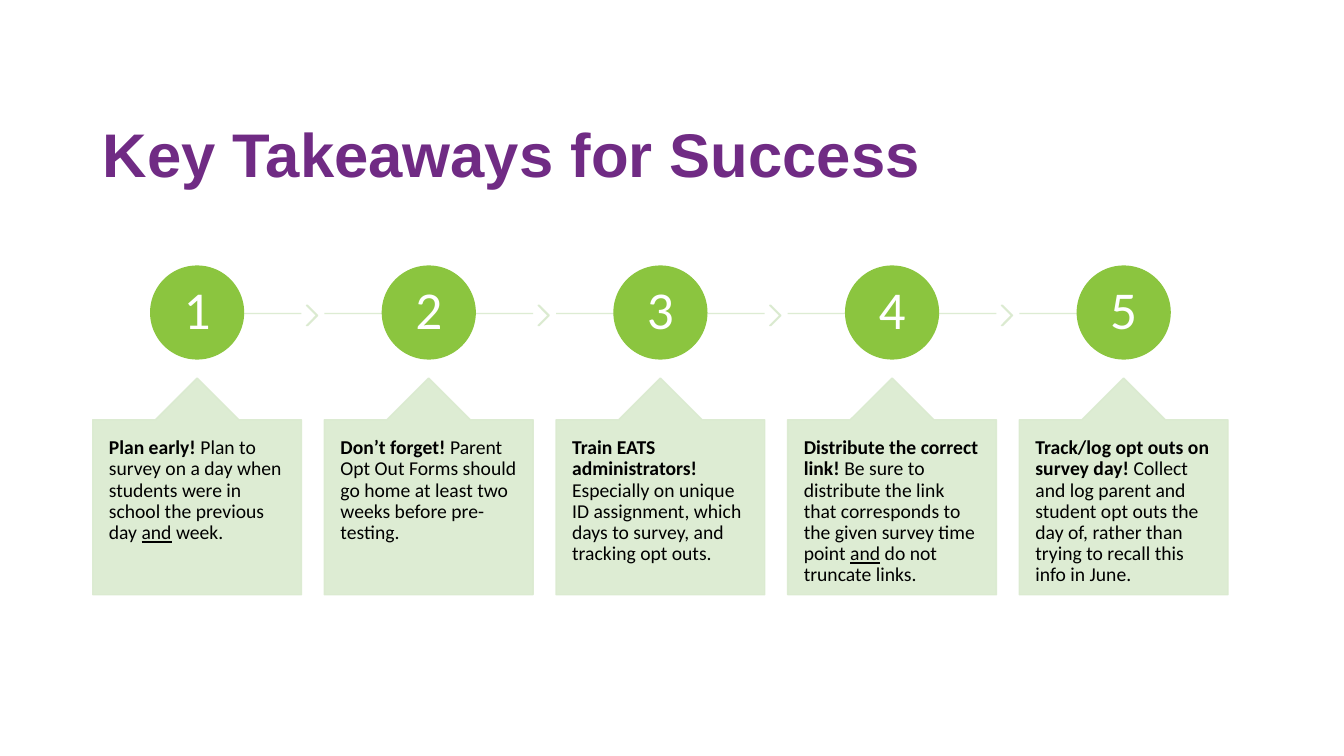
from lxml.etree import SubElement
from pptx import Presentation
from pptx.dml.color import RGBColor
from pptx.enum.shapes import MSO_CONNECTOR, MSO_SHAPE
from pptx.enum.text import MSO_ANCHOR, PP_ALIGN
from pptx.oxml.ns import qn
from pptx.util import Inches, Pt

COLORS = {"purple": "702B84", "green": "8BC53F", "pale": "DAEACF",
          "white": "FFFFFF", "black": "000000"}

# Each step is a list of (text, style) runs
STEPS = [
    [("Plan early! ", "b"),
     ("Plan to survey on a day when students were in school the previous day ", ""),
     ("and", "u"), (" week.", "")],
    [("Don’t forget!", "b"),
     (" Parent Opt Out Forms should go home at least two weeks before pre-testing.", "")],
    [("Train EATS administrators! ", "b"),
     ("Especially on unique ID assignment, which days to survey, and tracking opt outs.", "")],
    [("Distribute the correct link! ", "b"),
     ("Be sure to distribute the link that corresponds to the given survey time point ", ""),
     ("and", "u"), (" do not truncate links.", "")],
    [("Track/log opt outs on survey day! ", "b"),
     ("Collect and log parent and student opt outs the day of, rather than trying "
      "to recall this info in June.", "")],
]


class StepSlide:
    # Column grid in inches
    LEFT, RIGHT, COLUMN = 0.92, 12.18, 2.07
    PITCH = (RIGHT - LEFT - COLUMN) / (len(STEPS) - 1)
    # Rows in inches
    TITLE_TOP, CIRCLE_TOP, CALLOUT_TOP = 0.84, 2.64, 3.75
    CIRCLE, CALLOUT_HEIGHT = 0.92, 2.15
    LINE_Y = 3.11

    def __init__(self, slide):
        self.slide = slide

    def x(self, column):
        """Left edge of the point that lies `column` pitches along the grid."""
        return self.LEFT + column * self.PITCH

    def paint(self, target, color, opacity=100):
        target.solid()
        target.fore_color.rgb = RGBColor.from_string(COLORS[color])
        if opacity < 100:
            srgb = target._xPr.find(qn("a:solidFill")).find(qn("a:srgbClr"))
            SubElement(srgb, qn("a:alpha")).set("val", str(opacity * 1000))

    def add_text(self, frame, runs, font, size, color, inset, anchor, align=PP_ALIGN.LEFT):
        frame.word_wrap = True
        frame.vertical_anchor = anchor
        frame.margin_left = frame.margin_right = Inches(inset[0])
        frame.margin_top = frame.margin_bottom = Inches(inset[1])
        paragraph = frame.paragraphs[0]
        paragraph.alignment = align
        paragraph.line_spacing = 0.9
        for text, style in runs:
            run = paragraph.add_run()
            run.text = text
            run.font.name = font
            run.font.size = Pt(size)
            run.font.bold = style == "b"
            run.font.underline = style == "u"
            run.font.color.rgb = RGBColor.from_string(COLORS[color])

    def shape(self, preset, left, top, width, height, color, opacity=100, adjust=()):
        shape = self.slide.shapes.add_shape(
            preset, Inches(left), Inches(top), Inches(width), Inches(height))
        shape.shadow.inherit = False
        for index, value in enumerate(adjust):
            shape.adjustments[index] = value
        self.paint(shape.fill, color, opacity)
        self.paint(shape.line.fill, color, opacity)
        shape.line.width = Pt(1)
        return shape

    def title(self, text):
        box = self.slide.shapes.add_textbox(
            Inches(self.LEFT), Inches(self.TITLE_TOP), Inches(11.5), Inches(1.45))
        self.add_text(box.text_frame, [(text, "b")], "Arial", 44, "purple",
                      (0.1, 0.05), MSO_ANCHOR.MIDDLE)

    def track(self, start, end):
        line = self.slide.shapes.add_connector(
            MSO_CONNECTOR.STRAIGHT, Inches(start), Inches(self.LINE_Y),
            Inches(end), Inches(self.LINE_Y))
        self.paint(line.line.fill, "pale", 90)
        line.line.width = Pt(1)
        SubElement(line._element.spPr, qn("a:effectLst"))

    def chevron(self, column):
        self.shape(MSO_SHAPE.CHEVRON, self.x(column) + self.COLUMN + 0.05, 3.03,
                   0.11, 0.2, "pale", 90, (0.9,))

    def badge(self, column, number):
        left = self.x(column) + (self.COLUMN - self.CIRCLE) / 2
        circle = self.shape(MSO_SHAPE.OVAL, left, self.CIRCLE_TOP,
                            self.CIRCLE, self.CIRCLE, "green")
        self.add_text(circle.text_frame, [(str(number), "")], "Calibri", 38, "white",
                      (0.04, 0.04), MSO_ANCHOR.MIDDLE, PP_ALIGN.CENTER)

    def callout(self, column, runs):
        box = self.shape(MSO_SHAPE.UP_ARROW_CALLOUT, self.x(column), self.CALLOUT_TOP,
                         self.COLUMN, self.CALLOUT_HEIGHT, "pale", 90, (0.5, 0.2, 0.2, 1))
        self.add_text(box.text_frame, runs, "Calibri", 14, "black",
                      (0.16, 0.18), MSO_ANCHOR.TOP)


def main():
    deck = Presentation()
    deck.slide_width, deck.slide_height = Inches(13.33), Inches(7.5)
    page = StepSlide(deck.slides.add_slide(deck.slide_layouts[6]))

    # Heading
    page.title("Key Takeaways for Success")

    # Five steps; the track runs from the first circle to the last
    last = len(STEPS) - 1
    for column, runs in enumerate(STEPS):
        left = page.x(column)
        middle, right = left + page.COLUMN / 2, left + page.COLUMN
        page.track(middle if column == 0 else left, middle if column == last else right)
        if column < last:
            page.chevron(column)
        page.badge(column, column + 1)
        page.callout(column, runs)

    deck.save("out.pptx")


if __name__ == "__main__":
    main()
